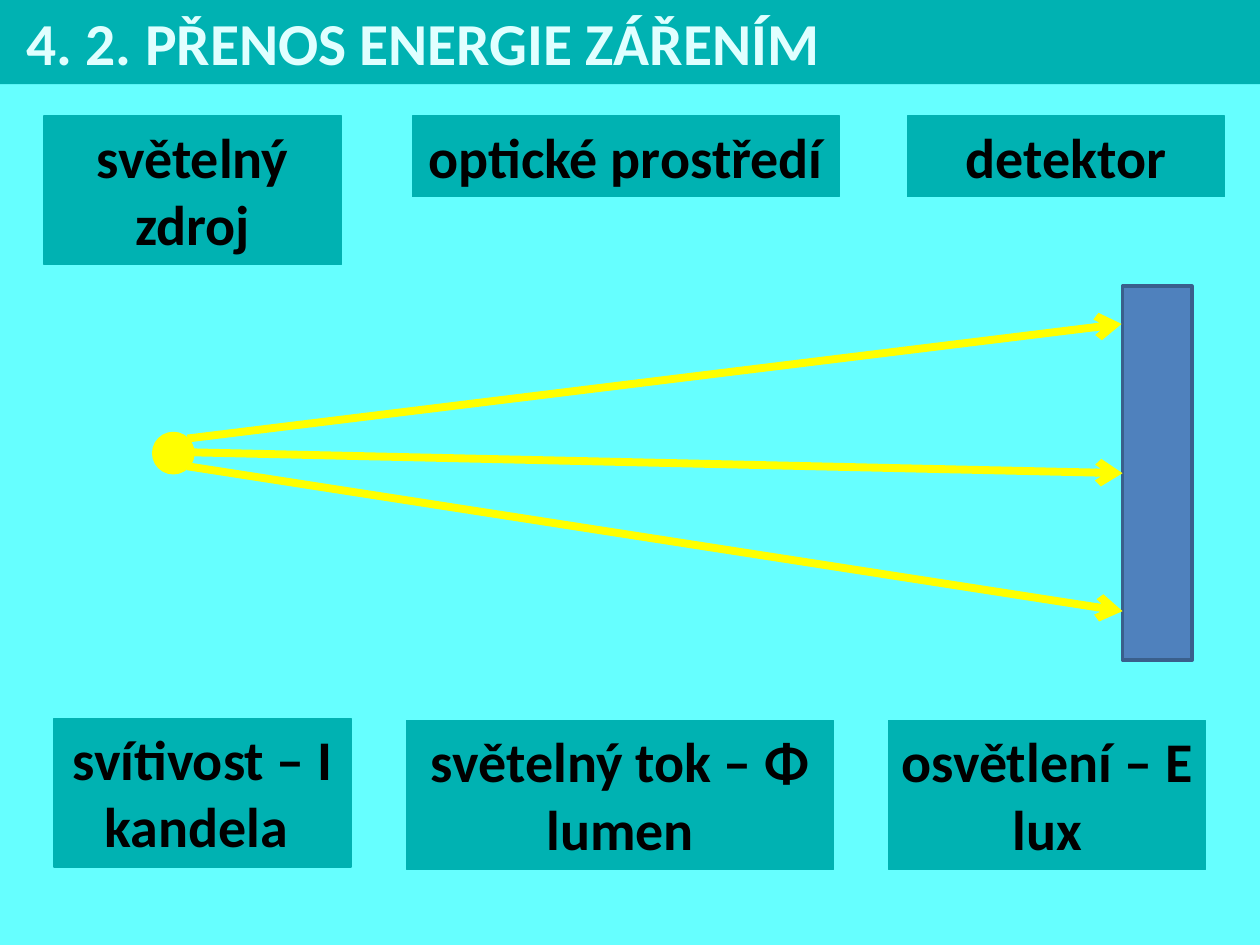
from dataclasses import dataclass

from lxml.etree import SubElement
from pptx import Presentation
from pptx.dml.color import RGBColor
from pptx.enum.shapes import MSO_CONNECTOR, MSO_SHAPE
from pptx.enum.text import MSO_ANCHOR, MSO_AUTO_SIZE, PP_ALIGN
from pptx.oxml.ns import qn
from pptx.util import Cm, Pt


@dataclass(frozen=True)
class Theme:
    background: str = "66FFFF"
    panel: str = "00B2B2"
    title: str = "E0FFFF"
    text: str = "000000"
    light: str = "FFFF00"
    detector: str = "4F81BD"
    detector_edge: str = "3A5F8C"
    font: str = "Calibri"
    title_size: int = 34
    label_size: int = 32


THEME = Theme()
COLUMN_WIDTHS = (5.99, 8.61, 6.4)
# Each label: left, top, height (cm) and lines of text
TOP_LABELS = (
    (0.89, 2.34, 3, ["světelný zdroj"]),
    (8.31, 2.34, 1.63, ["optické prostředí"]),
    (18.29, 2.34, 1.63, ["detektor"]),
)
BOTTOM_LABELS = (
    (1.09, 14.48, 3, ["svítivost – I", "kandela "]),
    (8.2, 14.53, 3, ["světelný tok – Φ", "lumen"]),
    (17.91, 14.53, 3, ["osvětlení – E", "lux"]),
)


def add_box(slide, kind, left, top, width, height, fill, line=None, line_width=0.75):
    shape = slide.shapes.add_shape(kind, Cm(left), Cm(top), Cm(width), Cm(height))
    shape.shadow.inherit = False
    shape.fill.solid()
    shape.fill.fore_color.rgb = RGBColor.from_string(fill)
    if line:
        shape.line.color.rgb = RGBColor.from_string(line)
        shape.line.width = Pt(line_width)
    else:
        shape.line.fill.background()
    return shape


def write_text(shape, lines, size=THEME.label_size, color=THEME.text,
               align=PP_ALIGN.CENTER, anchor=MSO_ANCHOR.TOP):
    frame = shape.text_frame
    frame.word_wrap = True
    frame.auto_size = MSO_AUTO_SIZE.SHAPE_TO_FIT_TEXT
    frame.vertical_anchor = anchor
    frame.text = "\n".join(lines)
    for paragraph in frame.paragraphs:
        paragraph.alignment = align
        font = paragraph.runs[0].font
        font.name = THEME.font
        font.size = Pt(size)
        font.bold = True
        font.color.rgb = RGBColor.from_string(color)


def add_title(slide, text):
    bar = add_box(slide, MSO_SHAPE.RECTANGLE, 0, 0, 25.4, 1.7, THEME.panel)
    bar.text_frame.margin_left = Cm(0.53)
    write_text(bar, [text], size=THEME.title_size, color=THEME.title,
               align=PP_ALIGN.LEFT, anchor=MSO_ANCHOR.MIDDLE)


def add_labels(slide, labels):
    for width, (left, top, height, lines) in zip(COLUMN_WIDTHS, labels):
        box = add_box(slide, MSO_SHAPE.RECTANGLE, left, top, width, height,
                      THEME.panel, THEME.panel)
        write_text(box, lines)


def add_ray(slide, start, end):
    ray = slide.shapes.add_connector(
        MSO_CONNECTOR.STRAIGHT, *(Cm(value) for value in start + end))
    ray.line.color.rgb = RGBColor.from_string(THEME.light)
    ray.line.width = Pt(4.5)
    SubElement(ray.line._get_or_add_ln(), qn("a:tailEnd"), type="arrow")
    SubElement(ray._element.spPr, qn("a:effectLst"))
    return ray


def add_light_path(slide):
    """Draw the detector, three rays and the light source they leave."""
    detector = add_box(slide, MSO_SHAPE.RECTANGLE, 22.63, 5.77, 1.4, 7.54,
                       THEME.detector, THEME.detector_edge, 2)
    add_ray(slide, (3.78, 8.84), (22.61, 6.53))
    middle_ray = add_ray(slide, (3.89, 9.12), (22.63, 9.54))
    middle_ray.end_connect(detector, 1)
    add_ray(slide, (3.78, 9.4), (22.63, 12.32))
    add_box(slide, MSO_SHAPE.OVAL, 3.1, 8.74, 0.79, 0.79,
            THEME.light, THEME.light, 2)


def main():
    presentation = Presentation()
    presentation.slide_width = Cm(25.4)
    presentation.slide_height = Cm(19.05)
    slide = presentation.slides.add_slide(presentation.slide_layouts[6])
    slide.background.fill.solid()
    slide.background.fill.fore_color.rgb = RGBColor.from_string(THEME.background)
    add_title(slide, "4. 2. PŘENOS ENERGIE ZÁŘENÍM")
    add_labels(slide, BOTTOM_LABELS)
    add_light_path(slide)
    add_labels(slide, TOP_LABELS)
    presentation.save("out.pptx")


if __name__ == "__main__":
    main()
